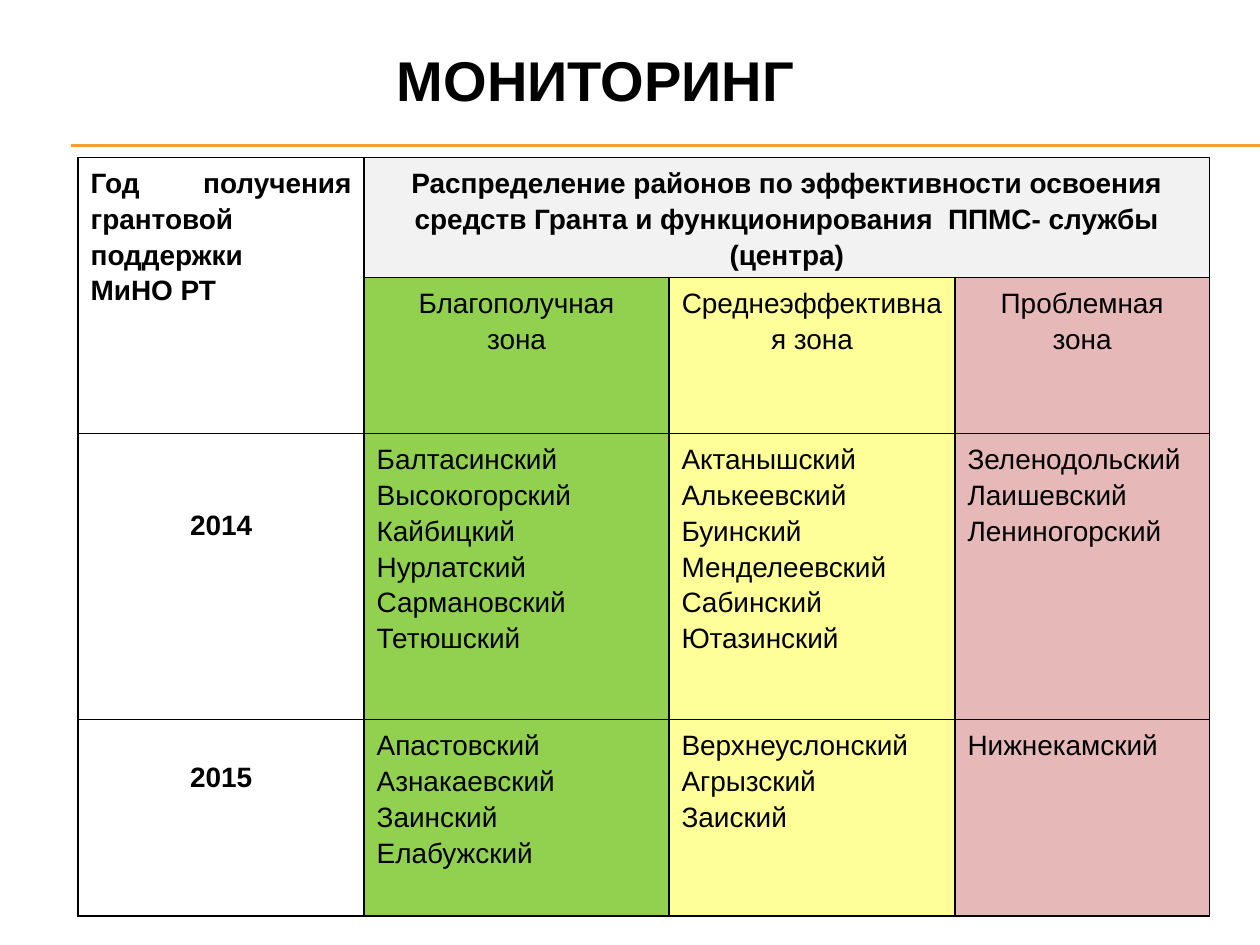
import pptx
import pptx.util
import pptx.dml.color
import pptx.enum.shapes
import pptx.enum.text
import pptx.oxml
import pptx.oxml.ns

Inches, Pt = pptx.util.Inches, pptx.util.Pt
PP_ALIGN = pptx.enum.text.PP_ALIGN
GREEN, YELLOW, PINK, GREY = "92D050", "FFFF99", "E6B9B8", "F2F2F2"


def rgb(value):
    return pptx.dml.color.RGBColor.from_string(value)


def add_borders(cell, color="000000", width=Pt(1)):
    for side in ("lnL", "lnR", "lnT", "lnB"):
        cell._tc.get_or_add_tcPr().append(pptx.oxml.parse_xml(
            f'<a:{side} {pptx.oxml.ns.nsdecls("a")} w="{width}"><a:solidFill>'
            f'<a:srgbClr val="{color}"/></a:solidFill></a:{side}>'))


prs = pptx.Presentation()
prs.slide_width, prs.slide_height = Inches(10), Inches(7.5)
s = prs.slides.add_slide(prs.slide_layouts[5])

# Double rule under the title
for y in (1.15, 1.16):
    rule = s.shapes.add_connector(pptx.enum.shapes.MSO_CONNECTOR.STRAIGHT,
                                  Inches(0.56), Inches(y), Inches(10), Inches(y))
    rule.line.color.rgb = rgb("F0A22E")
    rule.line.width = Pt(0.75)
    rule._element.spPr.append(
        pptx.oxml.parse_xml(f'<a:effectLst {pptx.oxml.ns.nsdecls("a")}/>'))

title = s.shapes.title
title.left, title.top = Inches(3.05), Inches(0.31)
title.width, title.height = Inches(3.51), Inches(0.64)
tf = title.text_frame
tf.word_wrap = True
tf.auto_size = pptx.enum.text.MSO_AUTO_SIZE.NONE
tf.vertical_anchor = pptx.enum.text.MSO_ANCHOR.TOP
p = tf.paragraphs[0]
p.alignment = PP_ALIGN.LEFT
r = p.add_run()
r.text = "МОНИТОРИНГ"
r.font.name, r.font.size, r.font.bold = "Arial", Pt(32), True
r.font.color.rgb = rgb("000000")

# Each cell is a list of paragraphs
rows = [
    [["Год получения грантовой поддержки", "МиНО РТ"],
     ["Распределение районов по эффективности освоения средств Гранта "
      "и функционирования  ППМС- службы (центра)"], [], []],
    [[], ["Благополучная", "зона"], ["Среднеэффективная зона"], ["Проблемная", "зона"]],
    [["2014"],
     ["Балтасинский", "Высокогорский", "Кайбицкий", "Нурлатский", "Сармановский", "Тетюшский"],
     ["Актанышский", "Алькеевский", "Буинский", "Менделеевский", "Сабинский", "Ютазинский"],
     ["Зеленодольский", "Лаишевский", "Лениногорский"]],
    [["2015"],
     ["Апастовский", "Азнакаевский", "Заинский", "Елабужский"],
     ["Верхнеуслонский", "Агрызский", "Заиский"],
     ["Нижнекамский"]],
]
col_widths = [2.27, 2.42, 2.27, 2.02]
row_heights = [0.95, 1.24, 2.27, 1.56]
zone_fills = [None, GREEN, YELLOW, PINK]
year_margins = {2: 0.57, 3: 0.3}

table = s.shapes.add_table(4, 4, Inches(0.62), Inches(1.25),
                           Inches(sum(col_widths)), Inches(sum(row_heights))).table
table.first_row = table.horz_banding = False
for column, width in zip(table.columns, col_widths):
    column.width = Inches(width)
for row, height in zip(table.rows, row_heights):
    row.height = Inches(height)
table.cell(0, 0).merge(table.cell(1, 0))
table.cell(0, 1).merge(table.cell(0, 3))

for i, row in enumerate(rows):
    for j, lines in enumerate(row):
        cell = table.cell(i, j)
        add_borders(cell)
        if j == 0:
            cell.fill.background()
        else:
            cell.fill.solid()
            cell.fill.fore_color.rgb = rgb(GREY if i == 0 else zone_fills[j])
        if j == 0 and i in year_margins:
            cell.margin_top = Inches(year_margins[i])
        justified = (i == 0 and j == 0) or (i > 1 and j > 0)
        tf = cell.text_frame
        for n, line in enumerate(lines):
            p = tf.add_paragraph() if n else tf.paragraphs[0]
            p.alignment = PP_ALIGN.JUSTIFY if justified else PP_ALIGN.CENTER
            p.line_spacing = 1.15
            r = p.add_run()
            r.text = line
            r.font.name, r.font.size = "Arial", Pt(16)
            r.font.bold = i == 0 or j == 0
            r.font.color.rgb = rgb("000000")

prs.save("out.pptx")
